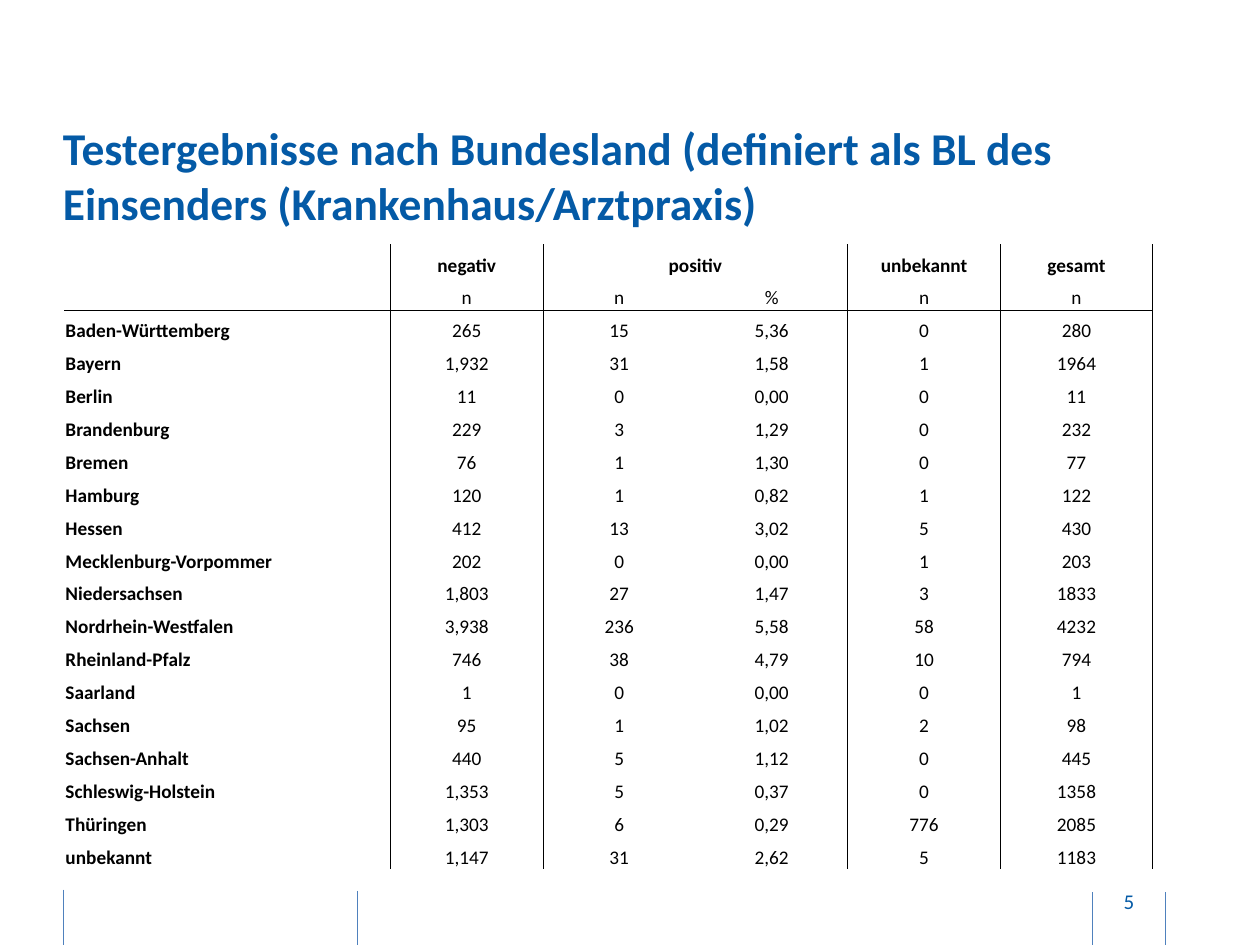
from lxml.etree import SubElement
from pptx import Presentation
from pptx.dml.color import RGBColor
from pptx.enum.shapes import MSO_CONNECTOR
from pptx.enum.text import MSO_ANCHOR, PP_ALIGN
from pptx.oxml.ns import qn
from pptx.util import Inches, Pt

BLUE = RGBColor(0x04, 0x5A, 0xA6)
RULE_BLUE = RGBColor(0x4F, 0x81, 0xBD)
BLACK = RGBColor(0, 0, 0)
FONT = "Calibri"
BORDER_WIDTH = Pt(0.5)
PLAIN_TABLE_STYLE = "{2D5ABB26-0587-4C30-8999-92F81FD0307C}"

FOOTER_RULES = [(8.67, 7.08), (2.84, 7.07), (0.5, 7.06), (9.25, 7.08)]
RULE_LENGTH = 0.45

TITLE = ("Testergebnisse nach Bundesland (definiert als BL des "
         "Einsenders (Krankenhaus/Arztpraxis)")
COLUMN_WIDTHS = [2.59] + [1.21] * 5
TABLE_HEIGHT = 4.96
RULED_COLUMNS = {0, 1, 3, 4, 5}  # columns with a line on their right
HEADER_ROWS = 2
ROWS = [
    ("", "negativ", "positiv", "", "unbekannt", "gesamt"),
    ("", "n", "n", "%", "n", "n"),
    ("Baden-Württemberg", "265", "15", "5,36", "0", "280"),
    ("Bayern", "1,932", "31", "1,58", "1", "1964"),
    ("Berlin", "11", "0", "0,00", "0", "11"),
    ("Brandenburg", "229", "3", "1,29", "0", "232"),
    ("Bremen", "76", "1", "1,30", "0", "77"),
    ("Hamburg", "120", "1", "0,82", "1", "122"),
    ("Hessen", "412", "13", "3,02", "5", "430"),
    ("Mecklenburg-Vorpommer", "202", "0", "0,00", "1", "203"),
    ("Niedersachsen", "1,803", "27", "1,47", "3", "1833"),
    ("Nordrhein-Westfalen", "3,938", "236", "5,58", "58", "4232"),
    ("Rheinland-Pfalz", "746", "38", "4,79", "10", "794"),
    ("Saarland", "1", "0", "0,00", "0", "1"),
    ("Sachsen", "95", "1", "1,02", "2", "98"),
    ("Sachsen-Anhalt", "440", "5", "1,12", "0", "445"),
    ("Schleswig-Holstein", "1,353", "5", "0,37", "0", "1358"),
    ("Thüringen", "1,303", "6", "0,29", "776", "2085"),
    ("unbekannt", "1,147", "31", "2,62", "5", "1183"),
]


def set_all(target, values):
    for name, value in values.items():
        setattr(target, name, value)


def write_text(paragraph, text, color, alignment, **font_values):
    paragraph.alignment = alignment
    run = paragraph.add_run()
    run.text = text
    set_all(run.font, {"name": FONT, **font_values})
    run.font.color.rgb = color


def add_text(slide, box, text, margin, alignment, **font_values):
    frame = slide.shapes.add_textbox(*map(Inches, box)).text_frame
    set_all(frame, {
        "word_wrap": True, "vertical_anchor": MSO_ANCHOR.MIDDLE,
        "margin_left": 0, "margin_right": 0,
        "margin_top": Inches(margin), "margin_bottom": Inches(margin),
    })
    write_text(frame.paragraphs[0], text, BLUE, alignment, **font_values)


def add_footer_rule(slide, x, top):
    rule = slide.shapes.add_connector(
        MSO_CONNECTOR.STRAIGHT, Inches(x), Inches(top),
        Inches(x), Inches(top + RULE_LENGTH))
    rule.line.color.rgb = RULE_BLUE
    rule.line.width = BORDER_WIDTH
    SubElement(rule._element.spPr, qn("a:effectLst"))


def set_borders(cell, visible):
    properties = cell._tc.get_or_add_tcPr()
    for side in ("L", "R", "T", "B"):
        line = SubElement(properties, qn(f"a:ln{side}"), w=str(BORDER_WIDTH))
        if side in visible:
            fill = SubElement(line, qn("a:solidFill"))
            SubElement(fill, qn("a:srgbClr"), val=str(BLACK))
        else:
            SubElement(line, qn("a:noFill"))


def visible_sides(row, column, spans):
    sides = set()
    if column in RULED_COLUMNS or spans:
        sides.add("R")
    if column - 1 in RULED_COLUMNS:
        sides.add("L")
    if row == HEADER_ROWS - 1:
        sides.add("B")
    if row == HEADER_ROWS:
        sides.add("T")
    return sides


def fill_cell(cell, text, row, column):
    set_all(cell, {
        "vertical_anchor": MSO_ANCHOR.BOTTOM, "margin_left": Inches(0.01),
        "margin_right": Inches(0.01), "margin_top": Inches(0.01),
        "margin_bottom": 0,
    })
    set_borders(cell, visible_sides(row, column, cell.is_merge_origin))
    cell.fill.background()
    paragraph = cell.text_frame.paragraphs[0]
    if text:
        write_text(paragraph, text, BLACK,
                   PP_ALIGN.CENTER if column else PP_ALIGN.LEFT,
                   size=Pt(11), bold=row == 0 or column == 0)
    else:
        # Keeps empty cells from stretching their row
        SubElement(paragraph._p, qn("a:endParaRPr"), sz="1100")


def add_results_table(slide, left, top):
    frame = slide.shapes.add_table(
        len(ROWS), len(COLUMN_WIDTHS), Inches(left), Inches(top),
        Inches(sum(COLUMN_WIDTHS)), Inches(TABLE_HEIGHT))
    table = frame.table
    set_all(table, {"first_row": False, "horz_banding": False})
    table._tbl.tblPr.find(qn("a:tableStyleId")).text = PLAIN_TABLE_STYLE
    for column, width in zip(table.columns, COLUMN_WIDTHS):
        column.width = Inches(width)
    table.cell(0, 2).merge(table.cell(0, 3))
    for row, texts in enumerate(ROWS):
        for column, text in enumerate(texts):
            fill_cell(table.cell(row, column), text, row, column)


def main():
    presentation = Presentation()
    set_all(presentation, {"slide_width": Inches(10),
                           "slide_height": Inches(7.5)})
    slide = presentation.slides.add_slide(presentation.slide_layouts[6])

    # Footer with slide number
    for x, top in FOOTER_RULES:
        add_footer_rule(slide, x, top)
    add_text(slide, (8.69, 6.95, 0.54, 0.4), "5", 0.05, PP_ALIGN.CENTER,
             size=Pt(12))

    # Title and results
    add_text(slide, (0.5, 0.91, 8.73, 0.96), TITLE, 0, PP_ALIGN.LEFT,
             size=Pt(26), bold=True)
    add_results_table(slide, 0.51, 1.94)

    presentation.save("out.pptx")


if __name__ == "__main__":
    main()
